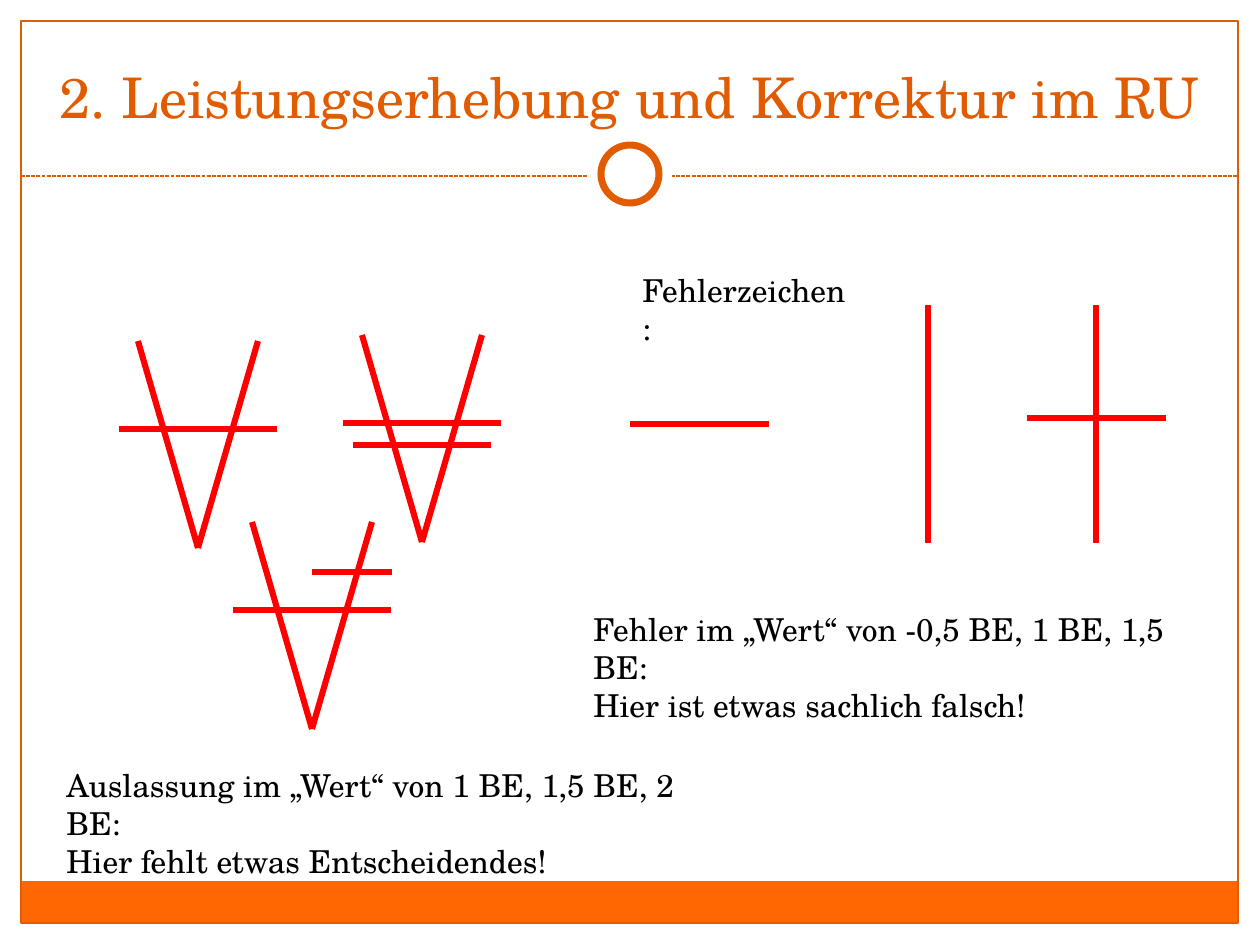
"""Build the slide on correction marks for omissions and errors."""
from dataclasses import dataclass
from typing import Optional

from lxml.etree import SubElement
from pptx import Presentation
from pptx.dml.color import RGBColor as RGB
from pptx.enum.dml import MSO_LINE as Dash
from pptx.enum.shapes import MSO_CONNECTOR as Conn, MSO_SHAPE as Shape
from pptx.enum.text import MSO_ANCHOR as Anchor, PP_ALIGN as Align
from pptx.oxml.ns import qn
from pptx.util import Emu, Pt

SCALE = 914400 / 126


@dataclass(frozen=True)
class Theme:
    font: str = "TeX Gyre Schola"
    accent: RGB = RGB(0xE1, 0x5B, 0x00)
    band: RGB = RGB(0xFF, 0x67, 0x00)
    mark: RGB = RGB(0xFF, 0x00, 0x00)
    ink: RGB = RGB(0x00, 0x00, 0x00)
    paper: RGB = RGB(0xFF, 0xFF, 0xFF)
    title_pt: int = 32
    body_pt: int = 18
    thin_pt: float = 0.75
    ring_pt: float = 4
    mark_pt: float = 3.5


@dataclass(frozen=True)
class Box:
    x: int
    y: int
    w: int
    h: int


@dataclass(frozen=True)
class Panel:
    kind: Shape
    box: Box
    fill: Optional[RGB] = None
    line: Optional[RGB] = None
    line_pt: float = 0


@dataclass(frozen=True)
class Stroke:
    x1: int
    y1: int
    x2: int
    y2: int


@dataclass(frozen=True)
class Hook:
    x: int
    y: int


@dataclass(frozen=True)
class Note:
    box: Box
    lines: tuple[str, ...]
    size: int
    color: RGB
    align: Align = Align.LEFT
    anchor: Anchor = Anchor.TOP


T = Theme()

FRAME = [
    Panel(Shape.RECTANGLE, Box(21, 881, 1217, 42), fill=T.band),
    Panel(Shape.RECTANGLE, Box(21, 21, 1217, 902), line=T.accent, line_pt=T.thin_pt),
]
RULE = Stroke(21, 176, 1239, 176)
RING = [
    Panel(Shape.OVAL, Box(588, 132, 84, 84), fill=T.paper),
    Panel(Shape.OVAL, Box(601, 145, 58, 58), T.paper, T.accent, T.ring_pt),
]
HOOKS = [Hook(198, 341), Hook(422, 335), Hook(312, 522)]
MARKS = [
    Stroke(353, 445, 491, 445),
    Stroke(312, 572, 392, 572),
    Stroke(630, 424, 769, 424),
    Stroke(928, 305, 928, 543),
    Stroke(1096, 305, 1096, 543),
    Stroke(1027, 418, 1166, 418),
]
NOTES = [
    Note(Box(42, 32, 1176, 104), ("2. Leistungserhebung und Korrektur im RU",),
         T.title_pt, T.accent, Align.CENTER, Anchor.BOTTOM),
    Note(Box(630, 265, 234, 50), ("Fehlerzeichen:",), T.body_pt, T.ink),
    Note(Box(581, 604, 638, 89), ("Fehler im „Wert“ von -0,5 BE, 1 BE, 1,5 BE:",
                                  "Hier ist etwas sachlich falsch!"), T.body_pt, T.ink),
    Note(Box(54, 760, 675, 89), ("Auslassung im „Wert“ von 1 BE, 1,5 BE, 2 BE:",
                                 "Hier fehlt etwas Entscheidendes!"), T.body_pt, T.ink),
]


def px(*values: int) -> list[Emu]:
    return [Emu(round(v * SCALE)) for v in values]


def edges(b: Box) -> list[Emu]:
    return px(b.x, b.y, b.w, b.h)


def draw_panel(shapes, panel: Panel) -> None:
    sp = shapes.add_shape(panel.kind, *edges(panel.box))
    sp.shadow.inherit = False
    if panel.fill is None:
        sp.fill.background()
    else:
        sp.fill.solid()
        sp.fill.fore_color.rgb = panel.fill
    if panel.line is None:
        sp.line.fill.background()
    else:
        sp.line.color.rgb = panel.line
        sp.line.width = Pt(panel.line_pt)


def draw_stroke(shapes, stroke: Stroke, color: RGB = T.mark,
                width: float = T.mark_pt, dash: Optional[Dash] = None) -> None:
    ends = px(stroke.x1, stroke.y1, stroke.x2, stroke.y2)
    cn = shapes.add_connector(Conn.STRAIGHT, *ends)
    cn.line.color.rgb = color
    cn.line.width = Pt(width)
    if dash is not None:
        cn.line.dash_style = dash
    SubElement(cn._element.spPr, qn("a:effectLst"))


def draw_hook(shapes, hook: Hook, half: int = 60, depth: int = 207,
              bar_half: int = 79, bar_drop: int = 88) -> None:
    group = shapes.add_group_shape()
    for side in (-half, half):
        draw_stroke(group.shapes, Stroke(hook.x + side, hook.y, hook.x, hook.y + depth))
    bar_y = hook.y + bar_drop
    draw_stroke(group.shapes, Stroke(hook.x - bar_half, bar_y, hook.x + bar_half, bar_y))


def draw_note(shapes, note: Note) -> None:
    tf = shapes.add_textbox(*edges(note.box)).text_frame
    tf.word_wrap = True
    tf.vertical_anchor = note.anchor
    for i, line in enumerate(note.lines):
        p = tf.add_paragraph() if i else tf.paragraphs[0]
        p.alignment = note.align
        r = p.add_run()
        r.text = line
        r.font.name = T.font
        r.font.size = Pt(note.size)
        r.font.color.rgb = note.color


def main() -> None:
    prs = Presentation()
    prs.slide_width, prs.slide_height = px(1260, 945)
    s = prs.slides.add_slide(prs.slide_layouts[6])
    for panel in FRAME:
        draw_panel(s.shapes, panel)
    draw_stroke(s.shapes, RULE, T.accent, T.thin_pt, Dash.SQUARE_DOT)
    for panel in RING:
        draw_panel(s.shapes, panel)
    for hook in HOOKS:
        draw_hook(s.shapes, hook)
    for mark in MARKS:
        draw_stroke(s.shapes, mark)
    for note in NOTES:
        draw_note(s.shapes, note)
    prs.save("out.pptx")


if __name__ == "__main__":
    main()
